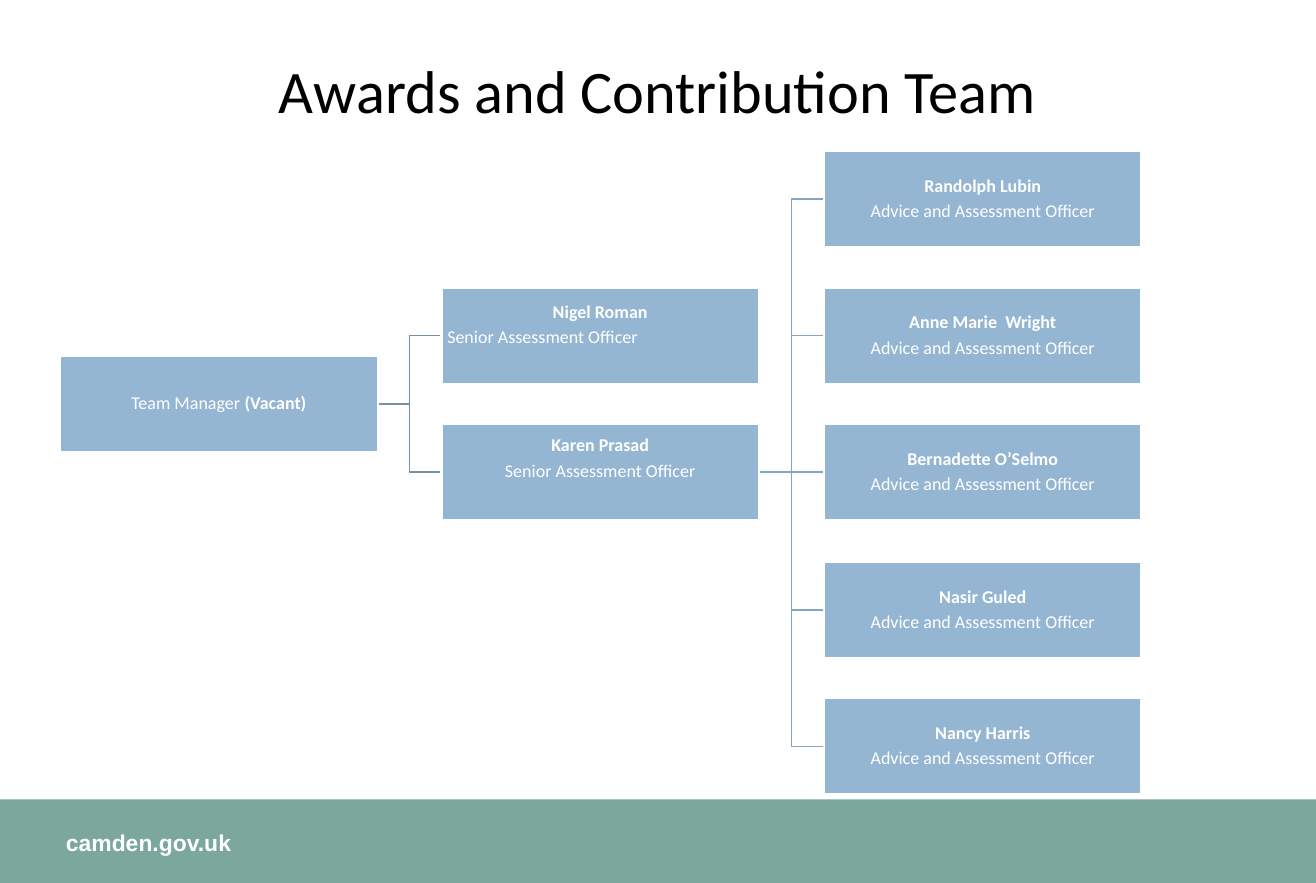
"""Build the Awards and Contribution Team organisation chart slide."""
from lxml import etree
from pptx import Presentation
from pptx.dml.color import RGBColor
from pptx.enum.shapes import MSO_CONNECTOR, MSO_SHAPE
from pptx.enum.text import MSO_ANCHOR, MSO_AUTO_SIZE, PP_ALIGN
from pptx.oxml.ns import qn
from pptx.util import Pt

PX = 9144
RECT = MSO_SHAPE.RECTANGLE
ELBOW, STRAIGHT = MSO_CONNECTOR.ELBOW, MSO_CONNECTOR.STRAIGHT
MIDDLE = MSO_ANCHOR.MIDDLE
CENTER, LEFT = PP_ALIGN.CENTER, PP_ALIGN.LEFT
BOX_W, BOX_H = 270, 82
COL_X = [51, 375, 700]
ROW_Y = {row: round(128 + 116.25 * row) for row in (0, 1, 1.5, 2, 3, 4)}
SENIOR = "Senior Assessment Officer"
OFFICER = "Advice and Assessment Officer"


def rgb(value):
    return RGBColor.from_string(value)


def add_box(col, row, lines):
    sp = s.shapes.add_shape(RECT, COL_X[col] * PX, ROW_Y[row] * PX, BOX_W * PX, BOX_H * PX)
    sp.shadow.inherit = False
    sp.fill.solid()
    sp.fill.fore_color.rgb = rgb("94B6D2")
    sp.line.color.rgb = rgb("FFFFFF")
    sp.line.width = Pt(1.5)
    tf = sp.text_frame
    tf.word_wrap = True
    tf.vertical_anchor = MIDDLE
    tf.margin_left = tf.margin_right = tf.margin_top = tf.margin_bottom = PX
    tf.text = "\n".join(lines)
    for i, p in enumerate(tf.paragraphs):
        p.alignment = CENTER
        p.line_spacing = 0.9
        p.space_after = Pt(3.6)
        p.font.name = "Calibri"
        p.font.size = Pt(11)
        p.font.color.rgb = rgb("FFFFFF")
        for r in p.runs:
            r.font.name = "Calibri"
            r.font.size = Pt(11)
            r.font.color.rgb = rgb("FFFFFF")
            r.font.bold = i == 0
    return tf


prs = Presentation()
prs.slide_width, prs.slide_height = 1118 * PX, 750 * PX
s = prs.slides.add_slide(prs.slide_layouts[5])

band = s.shapes.add_shape(RECT, 0, 679 * PX, 1118 * PX, 71 * PX)
band.shadow.inherit = False
band.fill.solid()
band.fill.fore_color.rgb = rgb("7BA79D")
band.line.fill.background()

tf = s.shapes.add_textbox(56 * PX, 704 * PX, 461 * PX, 24 * PX).text_frame
tf.word_wrap = True
tf.margin_left = tf.margin_top = tf.margin_bottom = 0
tf.text = "camden.gov.uk"
font = tf.paragraphs[0].runs[0].font
font.name, font.size, font.bold = "Arial", Pt(14), True
font.color.rgb = rgb("FFFFFF")

title = s.shapes.title
title.left, title.top, title.width, title.height = 77 * PX, 40 * PX, 964 * PX, 79 * PX
tf = title.text_frame
tf.text = "Awards and Contribution Team"
tf.auto_size = MSO_AUTO_SIZE.NONE
tf.vertical_anchor = MIDDLE
p = tf.paragraphs[0]
p.alignment = CENTER
p.line_spacing = 0.9
font = p.runs[0].font
font.name, font.size = "Calibri", Pt(36.9)
font.color.rgb = rgb("000000")

branches = [(1, 2, range(5), "86A5BF"), (0, 1.5, (1, 2), "7792A8")]
for col, parent, children, color in branches:
    for child in children:
        kind = STRAIGHT if child == parent else ELBOW
        cx = s.shapes.add_connector(
            kind,
            (COL_X[col] + BOX_W) * PX, (ROW_Y[parent] + BOX_H // 2) * PX,
            COL_X[col + 1] * PX, (ROW_Y[child] + BOX_H // 2) * PX)
        cx.line.color.rgb = rgb(color)
        cx.line.width = Pt(1)
        etree.SubElement(cx._element.spPr, qn("a:effectLst"))

manager = add_box(0, 1.5, ["Team Manager "]).paragraphs[0]
manager.runs[0].font.bold = False
r = manager.add_run()
r.text = "(Vacant)"
r.font.name, r.font.size, r.font.bold = "Calibri", Pt(11), True
r.font.color.rgb = rgb("FFFFFF")

nigel = add_box(1, 1, ["Nigel Roman", SENIOR])
nigel.margin_bottom = 19 * PX
nigel.paragraphs[1].alignment = LEFT
nigel.paragraphs[1]._p.get_or_add_pPr().set("marL", str(4 * PX))

karen = add_box(1, 2, ["Karen Prasad", SENIOR])
karen.margin_bottom = 24 * PX

officers = ["Randolph Lubin", "Anne Marie  Wright", "Bernadette O’Selmo", "Nasir Guled", "Nancy Harris"]
for row, name in enumerate(officers):
    add_box(2, row, [name, OFFICER])

prs.save("out.pptx")
